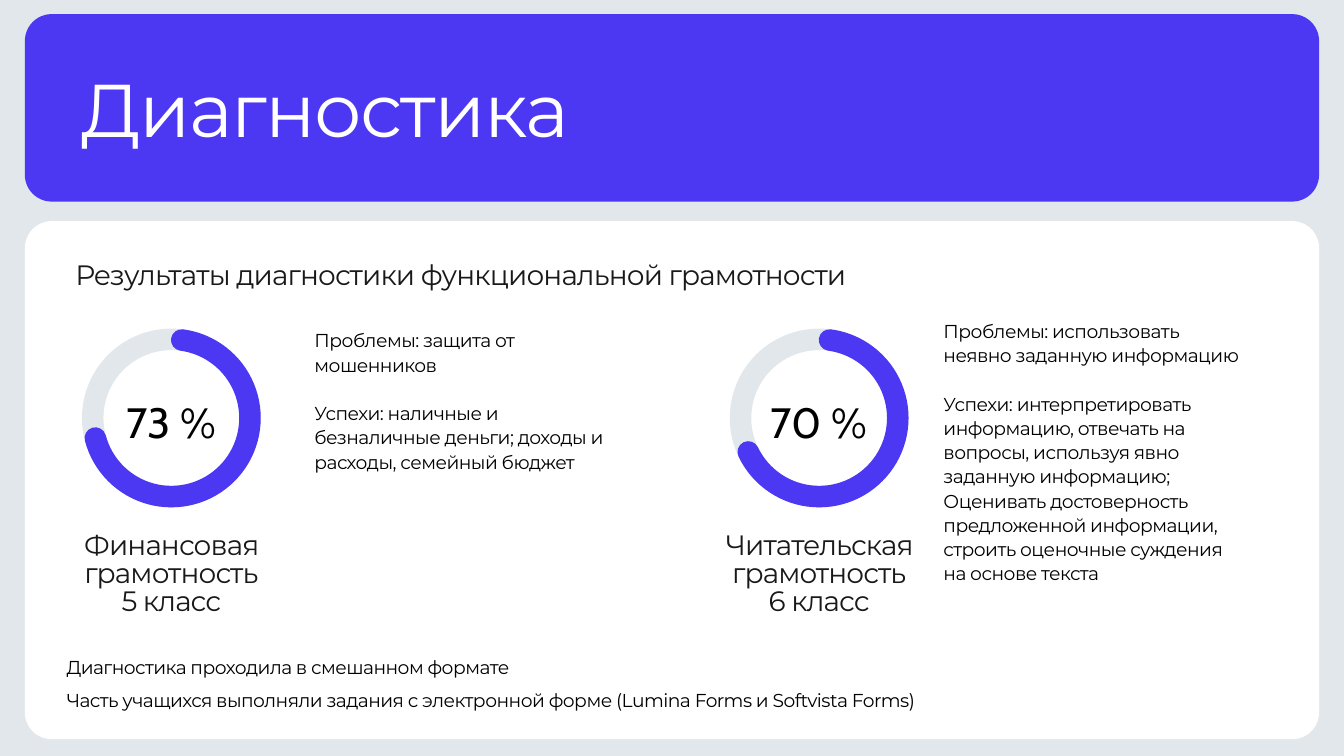
import pptx
import pptx.dml.color
import pptx.enum.shapes
import pptx.enum.text
import pptx.util

Inches = pptx.util.Inches
Pt = pptx.util.Pt
RGBColor = pptx.dml.color.RGBColor
Shapes = pptx.enum.shapes.MSO_SHAPE
Align = pptx.enum.text.PP_ALIGN

VIOLET = RGBColor(0x4C, 0x38, 0xF2)
GRAY = RGBColor(0xE2, 0xE7, 0xEB)
WHITE = RGBColor(0xFF, 0xFF, 0xFF)
INK = RGBColor(0x19, 0x19, 0x19)
BLACK = RGBColor(0, 0, 0)

RING_RADIUS = 1.33
BAND = 0.32
RING_CENTER_Y = 6.22
CAP_ANGLE = 7.6  # degrees taken by each rounded end of the arc

presentation = pptx.Presentation()
presentation.slide_width = Inches(20)
presentation.slide_height = Inches(11.25)
slide = presentation.slides.add_slide(presentation.slide_layouts[6])
slide.background.fill.solid()
slide.background.fill.fore_color.rgb = GRAY


def add_filled(kind, box, color, adjustment):
    shape = slide.shapes.add_shape(kind, *map(Inches, box))
    shape.adjustments[0] = adjustment
    shape.shadow.inherit = False
    shape.fill.solid()
    shape.fill.fore_color.rgb = color
    shape.line.fill.background()


def add_text(box, paragraphs, size, line, color=BLACK, font="Montserrat",
             align=Align.LEFT, tracking=-0.03, gap_before=None):
    """Write paragraphs; gap_before is the index that follows a one-line gap."""
    frame = slide.shapes.add_textbox(*map(Inches, box)).text_frame
    frame.word_wrap = True
    frame.margin_left = frame.margin_right = 0
    frame.margin_top = frame.margin_bottom = 0
    for index, text in enumerate(paragraphs):
        paragraph = frame.paragraphs[0] if index == 0 else frame.add_paragraph()
        paragraph.alignment = align
        paragraph.line_spacing = Pt(line)
        paragraph.space_before = Pt(line if index == gap_before else 0)
        paragraph.font.size = Pt(size)
        paragraph.font.name = font
        paragraph.font.color.rgb = color
        run = paragraph.add_run()
        run.text = text
        # Letter spacing, in hundredths of a point
        run._r.get_or_add_rPr().set("spc", str(round(size * tracking * 100)))


# Header and content panels
for top, height, color in [(0.21, 2.79, VIOLET), (3.29, 7.71, WHITE)]:
    add_filled(Shapes.ROUNDED_RECTANGLE, (0.37, top, 19.26, height), color,
               0.4 / height)

# Title and subtitle
add_text((1.22, 0.94, 15.82, 1.33), ["Диагностика"], 80, 96, WHITE, tracking=-0.02)
add_text((1.12, 3.92, 13.68, 0.44),
         ["Результаты диагностики функциональной грамотности"], 30, 30, INK)

# Progress rings with their captions
rings = [
    (2.55, 73, 3.1, ["Финансовая грамотность", "5 класс"]),
    (12.19, 70, 3.7, ["Читательская грамотность", "6 класс"]),
]
for center_x, percent, caption_width, caption in rings:
    add_text((center_x - 0.73, 5.77, 1.45, 0.82), [f"{percent}\N{NO-BREAK SPACE}%"],
             45.4, 63.6, font="Cabin", align=Align.CENTER, tracking=0)

    add_filled(Shapes.DONUT,
               (center_x - RING_RADIUS, RING_CENTER_Y - RING_RADIUS,
                2 * RING_RADIUS, 2 * RING_RADIUS),
               GRAY, BAND / (2 * RING_RADIUS))

    # Thick arc with round ends, clockwise from the top
    middle = RING_RADIUS - BAND / 2
    arc = slide.shapes.add_shape(
        Shapes.ARC, Inches(center_x - middle), Inches(RING_CENTER_Y - middle),
        Inches(2 * middle), Inches(2 * middle))
    # An adjustment of 0.6 is one degree, counted from three o'clock
    arc.adjustments[0] = 0.6 * (270 + CAP_ANGLE)
    arc.adjustments[1] = 0.6 * (3.6 * percent - CAP_ANGLE - 90)
    arc.shadow.inherit = False
    arc.fill.background()
    arc.line.color.rgb = VIOLET
    arc.line.width = Inches(BAND)
    arc.line._get_or_add_ln().set("cap", "rnd")

    add_text((center_x - caption_width / 2, 7.93, caption_width, 1.27), caption,
             30, 30, INK, align=Align.CENTER)

# Problems and successes
add_text((4.68, 4.87, 4.45, 2.11), [
    "Проблемы: защита от мошенников",
    "Успехи: наличные и безналичные деньги; доходы и расходы, семейный бюджет",
], 20, 26, gap_before=1)
add_text((14.04, 4.73, 4.45, 4.24), [
    "Проблемы: использовать неявно заданную информацию",
    "Успехи: интерпретировать информацию, отвечать на вопросы, "
    "используя явно заданную информацию;",
    "Оценивать достоверность предложенной информации, "
    "строить оценочные суждения на основе текста",
], 20, 26, gap_before=1)

# Notes on the format
add_text((0.99, 9.84, 15.82, 0.76), [
    "Диагностика проходила в смешанном формате",
    "Часть учащихся выполняли задания с электронной форме "
    "(Lumina Forms и Softvista Forms)",
], 20, 18, gap_before=1)

presentation.save("out.pptx")
